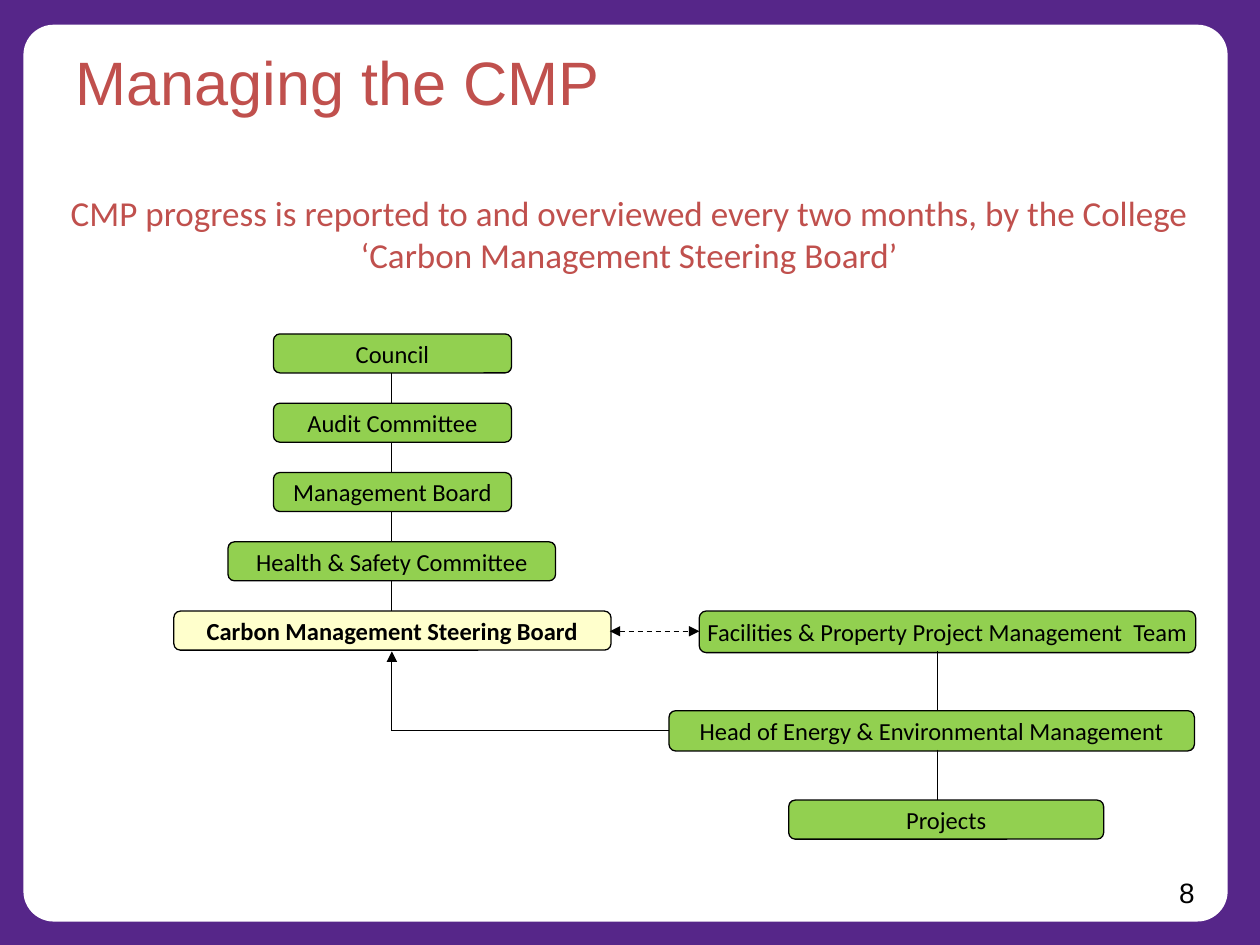
from typing import NamedTuple

from lxml.etree import SubElement
from pptx import Presentation
from pptx.dml.color import RGBColor
from pptx.enum.dml import MSO_LINE
from pptx.enum.shapes import MSO_CONNECTOR, MSO_SHAPE
from pptx.enum.text import MSO_ANCHOR, PP_ALIGN
from pptx.oxml.ns import qn
from pptx.slide import Slide
from pptx.text.text import TextFrame
from pptx.util import Inches, Pt

COLORS = {
    "purple": "562689",
    "white": "FFFFFF",
    "black": "000000",
    "red": "C0504D",
    "green": "92D050",
    "cream": "FFFFCC",
}


class Body(NamedTuple):
    name: str
    left: float
    top: float
    width: float
    height: float = 0.31
    fill: str = "green"
    bold: bool = False


class Link(NamedTuple):
    x1: float
    y1: float
    x2: float
    y2: float
    arrows: tuple[str, ...] = ()
    dashed: bool = False


BOX_HEIGHT = 0.31
CHAIN_TOP = 2.65
CHAIN_STEP = 0.55
CHAIN_X = 3.11
TEAM_X = 7.44
BOARD_Y = 5.01
HEAD_Y = 5.8

CHAIN = [
    Body(name, left, CHAIN_TOP + level * CHAIN_STEP, width)
    for level, (name, left, width) in enumerate([
        ("Council", 2.17, 1.89),
        ("Audit Committee", 2.17, 1.89),
        ("Management Board", 2.17, 1.89),
        ("Health & Safety Committee", 1.81, 2.6),
        ("Carbon Management Steering Board", 1.38, 3.47),
    ])
]
CHAIN[-1] = CHAIN[-1]._replace(fill="cream", bold=True)

TEAM = [
    Body("Facilities & Property Project Management  Team", 5.55, 4.85, 3.94, 0.33),
    Body("Head of Energy & Environmental Management", 5.31, 5.64, 4.17, 0.32),
    Body("Projects", 6.26, 6.35, 2.5),
]

LINKS = [
    Link(CHAIN_X, upper.top + BOX_HEIGHT, CHAIN_X, lower.top)
    for upper, lower in zip(CHAIN, CHAIN[1:])
] + [
    Link(TEAM_X, 5.17, TEAM_X, 5.64),
    Link(TEAM_X, 5.95, TEAM_X, 6.35),
    Link(4.84, BOARD_Y, 5.55, BOARD_Y, ("headEnd", "tailEnd"), dashed=True),
    Link(CHAIN_X, 5.17, CHAIN_X, HEAD_Y, ("headEnd",)),
    Link(CHAIN_X, HEAD_Y, 5.31, HEAD_Y),
]


def rgb(name: str) -> RGBColor:
    return RGBColor.from_string(COLORS[name])


def write(frame: TextFrame, lines: list[str], size: float, font: str, color: str,
          align: PP_ALIGN, bold: bool = False) -> None:
    frame.text = "\n".join(lines)
    for paragraph in frame.paragraphs:
        paragraph.alignment = align
        paragraph.font.size = Pt(size)
        paragraph.font.name = font
        paragraph.font.bold = bold
        paragraph.font.color.rgb = rgb(color)


def add_panel(slide: Slide) -> None:
    panel = slide.shapes.add_shape(
        MSO_SHAPE.ROUNDED_RECTANGLE, Inches(0.2), Inches(0.21), Inches(9.53), Inches(7.09))
    panel.adjustments[0] = 0.032
    panel.shadow.inherit = False
    panel.fill.solid()
    panel.fill.fore_color.rgb = rgb("white")
    panel.line.color.rgb = rgb("white")
    panel.line.width = Pt(2)


def add_body(slide: Slide, body: Body) -> None:
    box = slide.shapes.add_shape(
        MSO_SHAPE.FLOWCHART_ALTERNATE_PROCESS,
        Inches(body.left), Inches(body.top), Inches(body.width), Inches(body.height))
    box.shadow.inherit = False
    box.fill.solid()
    box.fill.fore_color.rgb = rgb(body.fill)
    box.line.color.rgb = rgb("black")
    box.line.width = Pt(0.75)
    box.text_frame.word_wrap = False
    box.text_frame.vertical_anchor = MSO_ANCHOR.MIDDLE
    write(box.text_frame, [body.name], 14, "Calibri", "black", PP_ALIGN.CENTER, body.bold)


def add_link(slide: Slide, link: Link) -> None:
    connector = slide.shapes.add_connector(
        MSO_CONNECTOR.STRAIGHT,
        Inches(link.x1), Inches(link.y1), Inches(link.x2), Inches(link.y2))
    connector.line.color.rgb = rgb("black")
    connector.line.width = Pt(0.75)
    if link.dashed:
        connector.line.dash_style = MSO_LINE.DASH
    for end in link.arrows:
        SubElement(connector.line._get_or_add_ln(), qn(f"a:{end}"), type="triangle")
    SubElement(connector._element.spPr, qn("a:effectLst"))


def add_text(slide: Slide, left: float, top: float, width: float, height: float,
             lines: list[str], size: float, font: str, color: str, align: PP_ALIGN) -> None:
    box = slide.shapes.add_textbox(Inches(left), Inches(top), Inches(width), Inches(height))
    box.text_frame.word_wrap = True
    write(box.text_frame, lines, size, font, color, align)


def main() -> None:
    deck = Presentation()
    deck.slide_width, deck.slide_height = Inches(10), Inches(7.5)
    slide = deck.slides.add_slide(deck.slide_layouts[5])
    slide.background.fill.solid()
    slide.background.fill.fore_color.rgb = rgb("purple")

    add_panel(slide)
    title = slide.shapes.title
    title.left, title.top = Inches(0.5), Inches(0.3)
    title.width, title.height = Inches(6.8), Inches(1.01)
    title.text_frame.vertical_anchor = MSO_ANCHOR.TOP
    write(title.text_frame, ["Managing the CMP"], 35, "Arial", "red", PP_ALIGN.LEFT)
    slide.shapes._spTree.append(title._element)

    add_text(slide, 0.43, 1.47, 9.13, 0.77, [
        "CMP progress is reported to and overviewed every two months, by the College",
        "‘Carbon Management Steering Board’",
    ], 20, "Calibri", "red", PP_ALIGN.CENTER)
    for body in CHAIN + TEAM:
        add_body(slide, body)
    for link in LINKS:
        add_link(slide, link)
    add_text(slide, 7.3, 6.9, 2.28, 0.37, ["8"], 16, "Arial", "black", PP_ALIGN.RIGHT)

    deck.save("out.pptx")


if __name__ == "__main__":
    main()
